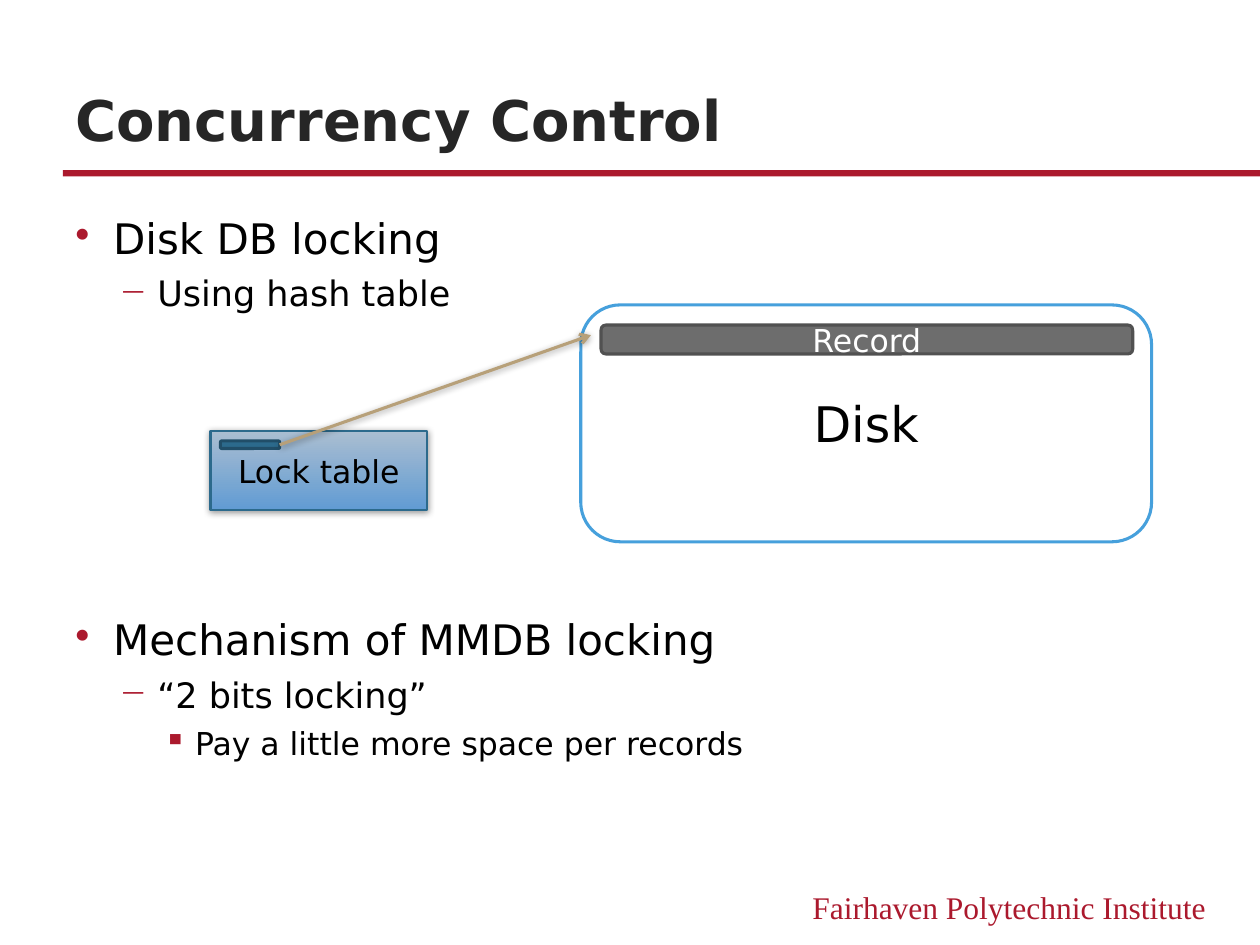
from lxml.etree import SubElement
from pptx import Presentation
from pptx.dml.color import RGBColor
from pptx.enum.shapes import MSO_CONNECTOR, MSO_SHAPE
from pptx.enum.text import MSO_ANCHOR, PP_ALIGN
from pptx.oxml.ns import qn
from pptx.util import Inches, Pt

SANS, SERIF = "DejaVu Sans", "Times New Roman"
RED, BLACK = "AB192D", "000000"
TITLE = "Concurrency Control"
FOOTER = "Fairhaven Polytechnic Institute"
POINTS = [
    (0, "Disk DB locking", 12),
    (1, "Using hash table", 6),
    (0, "Mechanism of MMDB locking", 173),
    (1, "“2 bits locking”", 6),
    (2, "Pay a little more space per records", 6),
]
LEVELS = [(24, "•", 0.3, 0.3), (20, "─", 0.65, 0.3), (18, "▪", 0.95, 0.25)]
RECT, ROUND = MSO_SHAPE.RECTANGLE, MSO_SHAPE.ROUNDED_RECTANGLE
BOXES = [
    (RECT, (0.5, 1.35, 9.5, 0.05), (RED,), None, None),
    (RECT, (1.67, 3.42, 1.72, 0.63), ("AABED1", "619BD3"), ("2C6A8C", 1.25), ("Lock table", 18, BLACK)),
    (ROUND, (4.61, 2.42, 4.53, 1.88), ("FFFFFF",), ("46A0DC", 1.75), ("Disk", 28, BLACK)),
    (ROUND, (4.77, 2.58, 4.22, 0.23), ("6D6D6D",), ("515151", 1.75), ("Record", 18, "FFFFFF")),
    (ROUND, (1.75, 3.5, 0.47, 0.06), ("2C6A8C",), ("214E68", 1.75), None),
]
ARROW = (2.22, 3.53, 4.69, 2.66)


def color(value):
    return RGBColor.from_string(value)


def style(para, size, tint, face=SANS, bold=False):
    font = para.font
    font.size, font.name, font.bold = Pt(size), face, bold
    font.color.rgb = color(tint)


def text_box(slide, place, anchor=MSO_ANCHOR.TOP):
    frame = slide.shapes.add_textbox(*map(Inches, place)).text_frame
    frame.word_wrap = True
    frame.vertical_anchor = anchor
    return frame


def bullet(para, mark, left, hang):
    props = para._p.get_or_add_pPr()
    props.set("marL", str(Inches(left)))
    props.set("indent", str(-Inches(hang)))
    SubElement(SubElement(props, qn("a:buClr")), qn("a:srgbClr"), val=RED)
    SubElement(props, qn("a:buChar"), char=mark)


def shade(effects):
    outer = SubElement(effects, qn("a:outerShdw"), blurRad=str(Pt(4)), dist=str(Pt(1)),
                       dir=str(88 * 60000), rotWithShape="0")
    tint = SubElement(outer, qn("a:srgbClr"), val=BLACK)
    SubElement(tint, qn("a:alpha"), val="40000")


def add_box(slide, kind, place, fills, edge, label):
    box = slide.shapes.add_shape(kind, *map(Inches, place))
    box.shadow.inherit = False
    if len(fills) > 1:
        box.fill.gradient()
        box.fill.gradient_angle = 270
        for stop, tint in zip(box.fill.gradient_stops, fills):
            stop.color.rgb = color(tint)
        shade(box._element.spPr.find(qn("a:effectLst")))
    else:
        box.fill.solid()
        box.fill.fore_color.rgb = color(fills[0])
    if edge:
        box.line.color.rgb = color(edge[0])
        box.line.width = Pt(edge[1])
    else:
        box.line.fill.background()
    if label:
        text, size, tint = label
        frame = box.text_frame
        frame.vertical_anchor = MSO_ANCHOR.MIDDLE
        para = frame.paragraphs[0]
        para.text = text
        para.alignment = PP_ALIGN.CENTER
        style(para, size, tint)


def add_arrow(slide):
    arrow = slide.shapes.add_connector(MSO_CONNECTOR.STRAIGHT, *map(Inches, ARROW))
    arrow.line.color.rgb = color("B7A079")
    arrow.line.width = Pt(1.75)
    props = arrow._element.spPr
    SubElement(props.find(qn("a:ln")), qn("a:tailEnd"), type="arrow")
    shade(SubElement(props, qn("a:effectLst")))


def main():
    deck = Presentation()
    deck.slide_width, deck.slide_height = Inches(10), Inches(7.5)
    slide = deck.slides.add_slide(deck.slide_layouts[6])

    foot = text_box(slide, (6, 7, 3.67, 0.4)).paragraphs[0]
    foot.text = FOOTER
    foot.alignment = PP_ALIGN.RIGHT
    style(foot, 18, RED, SERIF)

    head = text_box(slide, (0.5, 0.38, 9, 0.88), MSO_ANCHOR.BOTTOM).paragraphs[0]
    head.text = TITLE
    style(head, 32, "262626", bold=True)

    body = text_box(slide, (0.5, 1.67, 9, 5.08))
    for row, (level, text, gap) in enumerate(POINTS):
        para = body.add_paragraph() if row else body.paragraphs[0]
        size, mark, left, hang = LEVELS[level]
        para.text = text
        para.level = level
        para.line_spacing = 0.95
        para.space_before = Pt(gap)
        style(para, size, BLACK)
        bullet(para, mark, left, hang)

    for box in BOXES:
        add_box(slide, *box)
    add_arrow(slide)
    deck.save("out.pptx")


if __name__ == "__main__":
    main()
